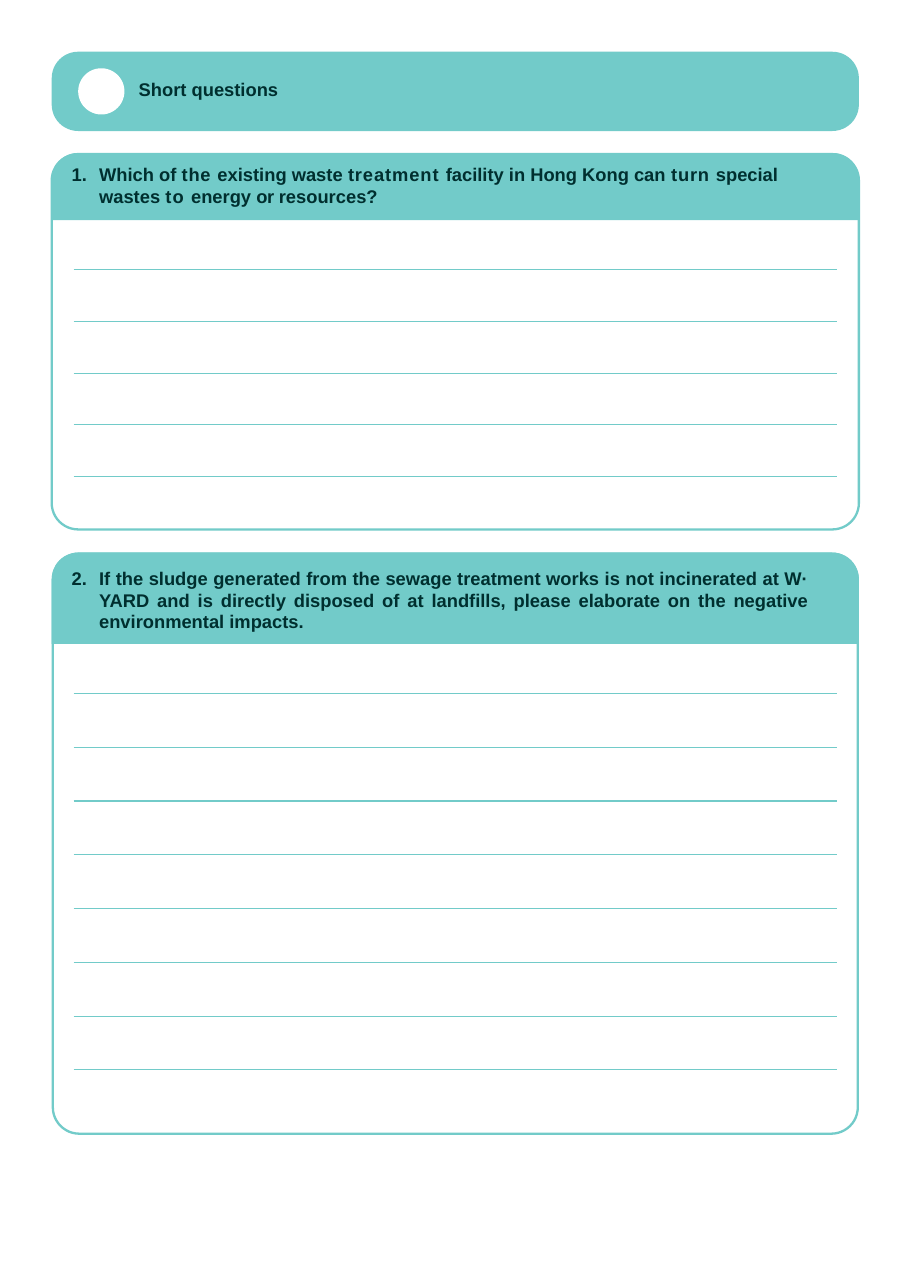
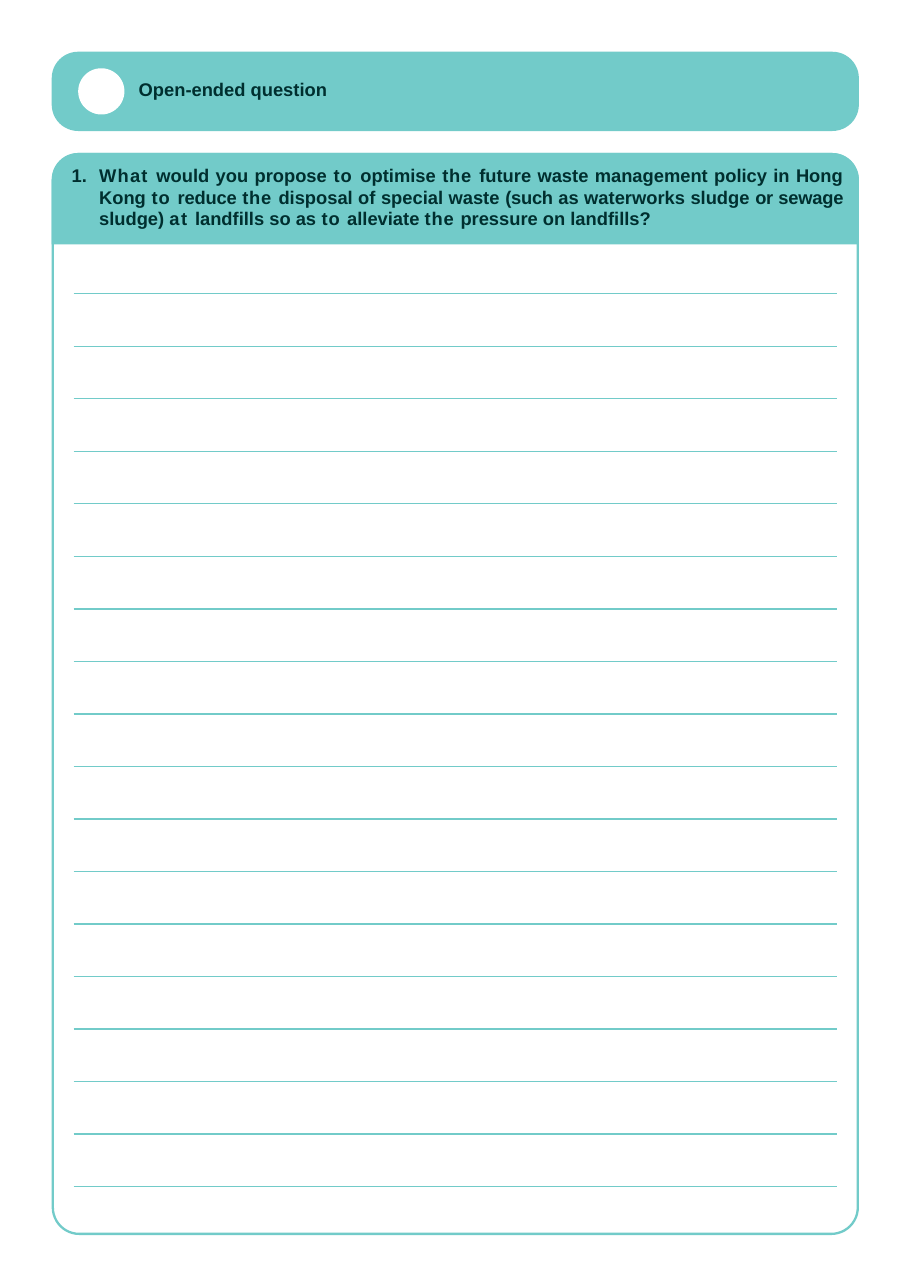
from dataclasses import dataclass
from itertools import groupby

from lxml import etree
from pptx import Presentation
from pptx.dml.color import RGBColor
from pptx.enum import shapes, text
from pptx.oxml.ns import qn
from pptx.util import Inches, Pt

COLOURS = {"teal": "72CBC9", "ink": "002F2F", "white": "FFFFFF"}
FONT = "Arial"
LEFT, WIDTH = 0.47, 7.33
RADIUS = 0.24
INDENT = 0.26
# Letter spacing in points for single words
TRACKING = {"the": 0.5, "to": 0.7, "turn": 0.5, "treatment": 0.6, "What": 0.8,
            "at": 0.9, "(such": -0.2, "or": -0.3, "reduce": -0.1, "sewage": -0.1}


@dataclass
class Question:
    number: str
    wording: str
    top: float
    height: float
    header: float
    lines: int
    foot: float
    text_drop: float
    text_width: float
    frame_inset: float = 0.01
    justified: bool = True
    tracked: bool = True


def colour(name):
    return RGBColor.from_string(COLOURS[name])


def add_block(page, kind, left, top, width, height, fill=None, line=None):
    block = page.shapes.add_shape(kind, Inches(left), Inches(top), Inches(width), Inches(height))
    block.shadow.inherit = False
    if fill:
        block.fill.solid()
        block.fill.fore_color.rgb = colour(fill)
    else:
        block.fill.background()
    if line:
        block.line.color.rgb = colour(line)
        block.line.width = Pt(1.5)
    else:
        block.line.fill.background()
    if len(block.adjustments):
        block.adjustments[0] = RADIUS / min(width, height)
    return block


def add_rule(page, left, top, width):
    rule = page.shapes.add_connector(shapes.MSO_CONNECTOR.STRAIGHT, Inches(left), Inches(top),
                                     Inches(left + width), Inches(top))
    rule.line.color.rgb = colour("teal")
    rule.line.width = Pt(0.75)
    etree.SubElement(rule.element.spPr, qn("a:effectLst"))


def place_text(holder, left, top, width, height, inset):
    """Move a placeholder to a box, in front of the shapes drawn so far."""
    holder.left, holder.top = Inches(left), Inches(top)
    holder.width, holder.height = Inches(width), Inches(height)
    holder.element.getparent().append(holder.element)
    frame = holder.text_frame
    frame.margin_left = frame.margin_right = frame.margin_bottom = 0
    frame.margin_top = Inches(inset)
    frame.word_wrap = True
    frame.auto_size = text.MSO_AUTO_SIZE.NONE
    frame.vertical_anchor = text.MSO_ANCHOR.TOP
    return frame.paragraphs[0]


def format_span(span):
    span.font.name = FONT
    span.font.size = Pt(12)
    span.font.bold = True
    span.font.color.rgb = colour("ink")


def set_hanging_indent(para):
    properties = para._p.get_or_add_pPr()
    properties.set("marL", str(Inches(INDENT)))
    properties.set("indent", str(Inches(-0.25)))
    etree.SubElement(properties, qn("a:buNone"))
    tabs = etree.SubElement(properties, qn("a:tabLst"))
    etree.SubElement(tabs, qn("a:tab"), pos=str(Inches(INDENT)), algn="l")


def add_title_band(page, title, top=0.47, height=0.72):
    add_block(page, shapes.MSO_SHAPE.ROUNDED_RECTANGLE, LEFT, top, WIDTH, height, fill="teal")
    add_block(page, shapes.MSO_SHAPE.OVAL, LEFT + 0.24, top + 0.15, 0.42, 0.42, fill="white")
    para = place_text(page.shapes.title, LEFT + 0.79, top + 0.23, 1.81, 0.22, 0.01)
    para.text = title
    para.alignment = text.PP_ALIGN.LEFT
    para.space_before = Pt(1)
    format_span(para.runs[0])


def write_question(para, question):
    para.alignment = text.PP_ALIGN.JUSTIFY if question.justified else text.PP_ALIGN.LEFT
    para.line_spacing = Pt(14)
    para.space_before = Pt(2.8)
    set_hanging_indent(para)

    def spacing(word):
        return TRACKING.get(word, 0) if question.tracked else 0

    pieces = [(question.number + "\t", 0)]
    for points, words in groupby(question.wording.split(), spacing):
        pieces.append((" ".join(words) + " ", points))
    pieces[-1] = (pieces[-1][0].rstrip(), pieces[-1][1])
    for wording, points in pieces:
        span = para.add_run()
        span.text = wording
        format_span(span)
        if points:
            span.font._element.set("spc", str(round(points * 100)))


def add_question(page, holder, question):
    """Draw the header, the frame and the answer lines of one question."""
    top, inset = question.top, question.frame_inset
    add_block(page, shapes.MSO_SHAPE.ROUND_2_SAME_RECTANGLE, LEFT, top, WIDTH, question.header,
              fill="teal")
    add_block(page, shapes.MSO_SHAPE.ROUNDED_RECTANGLE, LEFT + inset, top + 0.01,
              WIDTH - 2 * inset, question.height - 0.01, line="teal")
    first = top + question.header + 0.45
    gap = (top + question.height - question.foot - first) / (question.lines - 1)
    for index in range(question.lines):
        add_rule(page, LEFT + 0.2, first + index * gap, WIDTH - 0.4)
    para = place_text(holder, LEFT + 0.17, top + question.text_drop, question.text_width,
                      question.header - 0.18, 0.04)
    write_question(para, question)


def add_worksheet(deck, layout, title, questions):
    page = deck.slides.add_slide(deck.slide_layouts.get_by_name(layout))
    add_title_band(page, title)
    holders = [holder for holder in page.placeholders if holder.placeholder_format.idx > 0]
    for holder, question in zip(holders, questions):
        add_question(page, holder, question)


def main():
    deck = Presentation()
    deck.slide_width, deck.slide_height = Pt(595), Pt(842.5)
    add_worksheet(deck, "Two Content", "Short questions", [
        Question("1.", "Which of the existing waste treatment facility in Hong Kong can turn "
                 "special wastes to energy or resources?",
                 top=1.39, height=3.42, header=0.61, lines=5, foot=0.48,
                 text_drop=0.06, text_width=6.47, frame_inset=0, justified=False),
        Question("2.", "If the sludge generated from the sewage treatment works is not "
                 "incinerated at W· YARD and is directly disposed of at landfills, please "
                 "elaborate on the negative environmental impacts.",
                 top=5.02, height=5.28, header=0.83, lines=8, foot=0.58,
                 text_drop=0.1, text_width=6.71, tracked=False),
    ])
    add_worksheet(deck, "Title and Content", "Open-ended question", [
        Question("1.", "What would you propose to optimise the future waste management policy "
                 "in Hong Kong to reduce the disposal of special waste (such as waterworks "
                 "sludge or sewage sludge) at landfills so as to alleviate the pressure on "
                 "landfills?",
                 top=1.39, height=9.82, header=0.83, lines=18, foot=0.43,
                 text_drop=0.07, text_width=7.02),
    ])
    deck.save("out.pptx")


if __name__ == "__main__":
    main()
